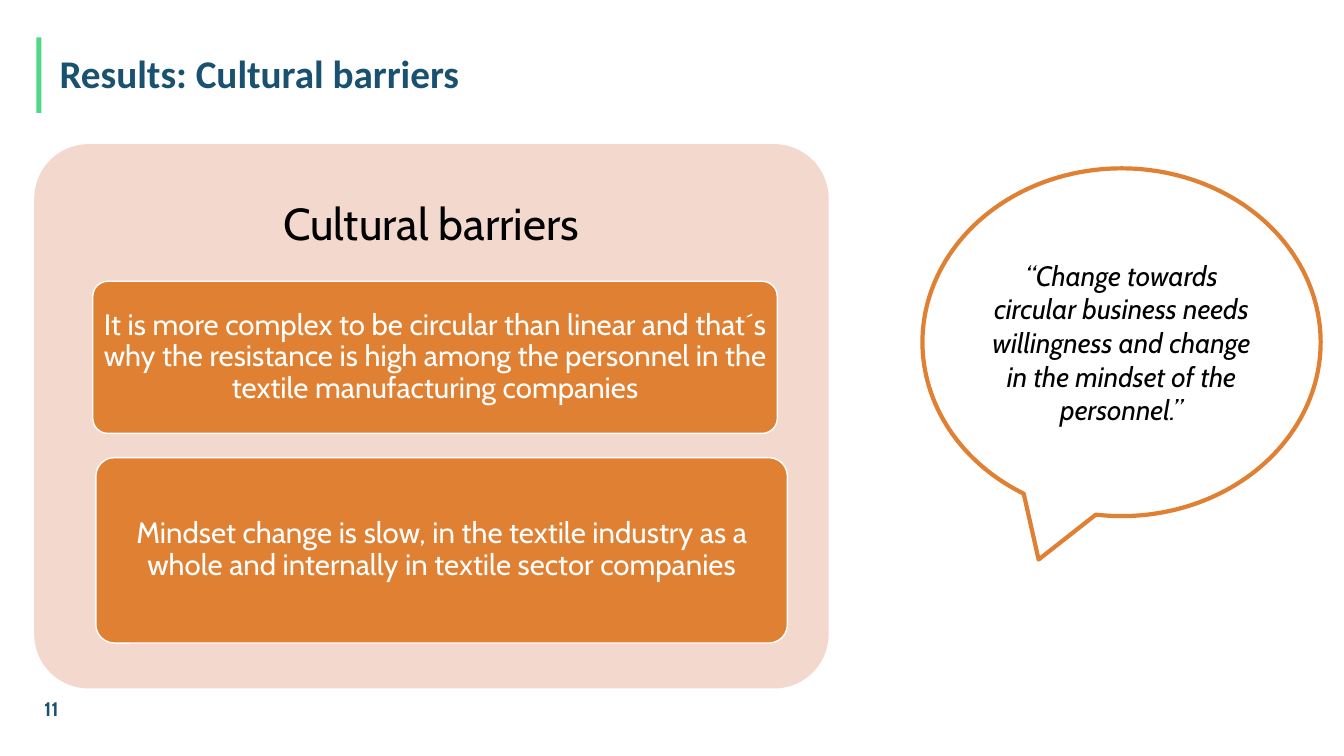
import pptx
import pptx.util
import pptx.dml.color
import pptx.enum.shapes
import pptx.enum.text

SHAPE = pptx.enum.shapes.MSO_SHAPE
ALIGN = pptx.enum.text.PP_ALIGN
MIDDLE = pptx.enum.text.MSO_ANCHOR.MIDDLE

# Content; each place is left, top, width, height in percent of the slide
TITLE = ("Results: Cultural barriers", (3.68, 4.93, 86.27, 10.13))
ACCENT_BAR = (2.7, 4.93, 0.38, 10)
PAGE_NUMBER = ("11", (2.55, 91.07, 22.51, 5.33))
PANEL = (2.55, 19.07, 59.11, 72)
HEADING = ("Cultural barriers", PANEL[:3] + (PANEL[3] * 0.3,))
BARRIERS = [
    ("It is more complex to be circular than linear and that´s why the resistance "
     "is high among the personnel in the textile manufacturing companies",
     (6.9, 37.2, 50.94, 20.13)),
    ("Mindset change is slow, in the textile industry as a whole and internally "
     "in textile sector companies",
     (7.13, 60.53, 51.46, 24.53)),
]
QUOTE = ("“Change towards circular business needs willingness and change in the "
         "mindset of the personnel.”", (68.64, 22.27, 29.63, 46))

NAVY, GREEN, ORANGE, PINK = "195170", "50D888", "E08032", "F3D8CE"
WHITE, BLACK = "FFFFFF", "000000"

prs = pptx.Presentation()
prs.slide_width = pptx.util.Inches(13.33)
prs.slide_height = pptx.util.Inches(7.5)
s = prs.slides.add_slide(prs.slide_layouts[5])


def rgb(value):
    return pptx.dml.color.RGBColor.from_string(value)


def place(area):
    sizes = (prs.slide_width, prs.slide_height) * 2
    return [int(size * share / 100) for size, share in zip(sizes, area)]


def add_box(kind, area, fill, line=None, width=1):
    sp = s.shapes.add_shape(kind, *place(area))
    sp.shadow.inherit = False
    sp.fill.solid()
    sp.fill.fore_color.rgb = rgb(fill)
    if line:
        sp.line.color.rgb = rgb(line)
        sp.line.width = pptx.util.Pt(width)
    else:
        sp.line.fill.background()
    if kind == SHAPE.ROUNDED_RECTANGLE:
        sp.adjustments[0] = 0.1
    return sp


def write(sp, text, size, color, font="Cabin", align=ALIGN.CENTER, spacing=0.9,
          bold=False, italic=False, insets=(0.1, 0.05)):
    tf = sp.text_frame
    tf.word_wrap = True
    tf.auto_size = pptx.enum.text.MSO_AUTO_SIZE.NONE
    tf.vertical_anchor = MIDDLE
    tf.margin_left = tf.margin_right = pptx.util.Inches(insets[0])
    tf.margin_top = tf.margin_bottom = pptx.util.Inches(insets[1])
    p = tf.paragraphs[0]
    p.alignment = align
    p.line_spacing = spacing
    r = p.add_run()
    r.text = text
    r.font.name = font
    r.font.size = pptx.util.Pt(size)
    r.font.bold = bold
    r.font.italic = italic
    r.font.color.rgb = rgb(color)


# Title with its accent bar
add_box(SHAPE.RECTANGLE, ACCENT_BAR, GREEN)
title = s.shapes.title
title.left, title.top, title.width, title.height = place(TITLE[1])
write(title, TITLE[0], 28, NAVY, font="Calibri", align=ALIGN.LEFT, bold=True)

# Page number
number = s.shapes.add_textbox(*place(PAGE_NUMBER[1]))
write(number, PAGE_NUMBER[0], 14, NAVY, align=ALIGN.LEFT, spacing=1.0, bold=True)

# Panel of barriers
add_box(SHAPE.ROUNDED_RECTANGLE, PANEL, PINK)
heading = s.shapes.add_textbox(*place(HEADING[1]))
write(heading, HEADING[0], 32, BLACK, insets=(0.13, 0.13))
for text, area in BARRIERS:
    barrier = add_box(SHAPE.ROUNDED_RECTANGLE, area, ORANGE, line=WHITE)
    write(barrier, text, 21, WHITE, insets=(0.06, 0.04))

# Quote in a speech bubble
bubble = add_box(SHAPE.OVAL_CALLOUT, QUOTE[1], WHITE, line=ORANGE, width=3)
write(bubble, QUOTE[0], 20, BLACK, spacing=1.0, italic=True)

prs.save("out.pptx")
